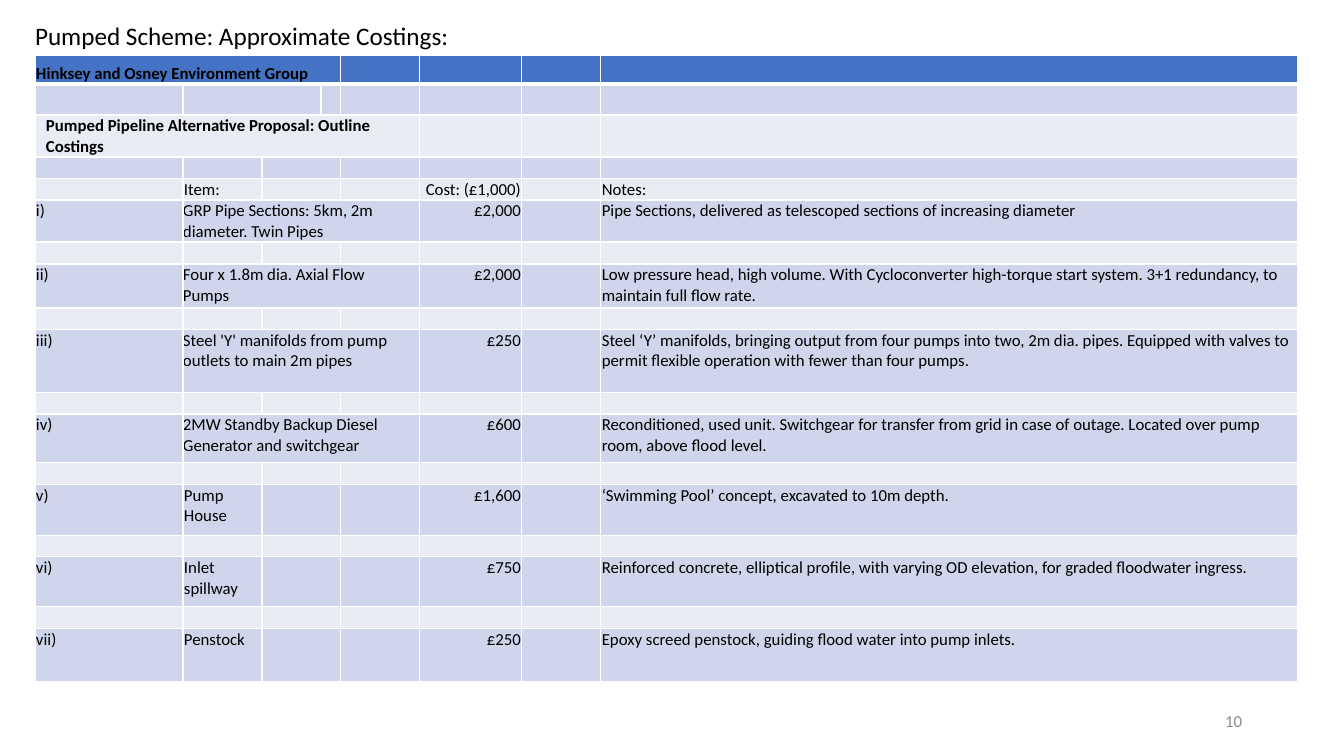
from lxml import etree
from pptx import Presentation
from pptx import util as u
from pptx.dml.color import RGBColor
from pptx.enum import text as t
from pptx.oxml import ns

PX = 914400 / 100.8
SLIDE_SIZE = (1344, 756)
FONT = "Calibri"
BLACK = RGBColor(0x00, 0x00, 0x00)
WHITE = RGBColor(0xFF, 0xFF, 0xFF)
GREY = RGBColor(0x8C, 0x8C, 0x8C)
BLUE = RGBColor(0x44, 0x72, 0xC4)
BAND_DARK = RGBColor(0xCF, 0xD5, 0xEA)
BAND_LIGHT = RGBColor(0xE9, 0xEB, 0xF5)

COLUMNS = [148, 79, 59, 20, 79, 102, 79, 697]
ROWS = [29, 31, 42, 21, 21, 42, 22, 44, 21, 63, 21, 49, 21, 51, 21, 50, 22, 53]
NUMBER, ITEM, COST, NOTES = 0, 1, 5, 7
FIRST_ITEM_ROW = 5
WIDE_ITEMS = 4  # items whose description runs across to the cost column

COSTINGS = [
    ("i)", "GRP Pipe Sections: 5km, 2m diameter. Twin Pipes", "£2,000",
     "Pipe Sections, delivered as telescoped sections of increasing diameter"),
    ("ii)", "Four x 1.8m dia. Axial Flow Pumps", "£2,000",
     "Low pressure head, high volume. With Cycloconverter high-torque start system. "
     "3+1 redundancy, to maintain full flow rate."),
    ("iii)", "Steel 'Y' manifolds from pump outlets to main 2m pipes", "£250",
     "Steel ‘Y’ manifolds, bringing output from four pumps into two, 2m dia. pipes. "
     "Equipped with valves to permit flexible operation with fewer than four pumps."),
    ("iv)", "2MW Standby Backup Diesel Generator and switchgear", "£600",
     "Reconditioned, used unit. Switchgear for transfer from grid in case of outage. "
     "Located over pump room, above flood level."),
    ("v)", "Pump House", "£1,600", "‘Swimming Pool’ concept, excavated to 10m depth."),
    ("vi)", "Inlet spillway", "£750",
     "Reinforced concrete, elliptical profile, with varying OD elevation, "
     "for graded floodwater ingress."),
    ("vii)", "Penstock", "£250",
     "Epoxy screed penstock, guiding flood water into pump inlets."),
]


def px(length):
    return u.Emu(round(length * PX))


def write(frame, words, size=12, color=BLACK, bold=False, align=t.PP_ALIGN.LEFT):
    paragraph = frame.paragraphs[0]
    paragraph.alignment = align
    run = paragraph.add_run()
    run.text = words
    run.font.name = FONT
    run.font.size = u.Pt(size)
    run.font.bold = bold
    run.font.color.rgb = color


def set_margins(holder, left, top, right, bottom):
    holder.margin_left, holder.margin_top = px(left), px(top)
    holder.margin_right, holder.margin_bottom = px(right), px(bottom)


def add_borders(cell, **widths):
    properties = cell._tc.get_or_add_tcPr()
    for place, side in enumerate("LRTB"):
        line = etree.Element(ns.qn(f"a:ln{side}"), w=str(u.Pt(widths.get(side, 1))))
        fill = etree.SubElement(line, ns.qn("a:solidFill"))
        etree.SubElement(fill, ns.qn("a:srgbClr"), val=str(WHITE))
        properties.insert(place, line)


def format_grid(table):
    for r in range(len(ROWS)):
        for c in range(len(COLUMNS)):
            cell = table.cell(r, c)
            cell.fill.solid()
            cell.fill.fore_color.rgb = BLUE if r == 0 else (BAND_LIGHT, BAND_DARK)[r % 2]
            add_borders(cell, B=3 if r == 0 else 1, T=3 if r == 1 else 1)
            set_margins(cell, 1, 1, 1, 0)
            # Keeps empty cells from stretching their row
            etree.SubElement(cell.text_frame.paragraphs[0]._p,
                             ns.qn("a:endParaRPr"), sz="1200")


def merge_cells(table):
    wide_rows = [FIRST_ITEM_ROW + 2 * n for n in range(WIDE_ITEMS)]
    spans = {0: (0, 3), 1: (1, 2), 2: (0, 4), **{r: (1, 4) for r in wide_rows}}
    for r in range(len(ROWS)):
        first, last = spans.get(r, (2, 3))
        table.cell(r, first).merge(table.cell(r, last))


def costings_table(slide, left, top):
    table = slide.shapes.add_table(len(ROWS), len(COLUMNS), px(left), px(top),
                                   px(sum(COLUMNS)), px(sum(ROWS))).table
    for column, width in zip(table.columns, COLUMNS):
        column.width = px(width)
    for row, height in zip(table.rows, ROWS):
        row.height = px(height)
    format_grid(table)
    merge_cells(table)

    # Headings
    headings = [(0, 0, "Hinksey and Osney Environment Group"),
                (2, 0, "Pumped Pipeline Alternative Proposal: Outline Costings"),
                (4, ITEM, "Item:"), (4, COST, "Cost: (£1,000)"), (4, NOTES, "Notes:")]
    for r, c, words in headings:
        cell = table.cell(r, c)
        cell.vertical_anchor = t.MSO_ANCHOR.BOTTOM
        write(cell.text_frame, words, bold=r < 4,
              align=t.PP_ALIGN.RIGHT if c == COST else t.PP_ALIGN.LEFT)
    set_margins(table.cell(2, 0), 11, 1, 11, 0)

    # Items, one on every second row
    for n, costing in enumerate(COSTINGS):
        r = FIRST_ITEM_ROW + 2 * n
        for c, words in zip((NUMBER, ITEM, COST, NOTES), costing):
            write(table.cell(r, c).text_frame, words,
                  align=t.PP_ALIGN.RIGHT if c == COST else t.PP_ALIGN.LEFT)
        if n < WIDE_ITEMS:
            set_margins(table.cell(r, ITEM), 0, 1, 11, 0)


def slide_title(slide, left, top, width, height):
    title = slide.shapes.title
    title.left, title.top, title.width, title.height = map(px, (left, top, width, height))
    frame = title.text_frame
    frame.word_wrap = True
    frame.auto_size = t.MSO_AUTO_SIZE.NONE
    frame.vertical_anchor = t.MSO_ANCHOR.TOP
    set_margins(frame, 10, 5, 10, 5)
    write(frame, "Pumped Scheme: Approximate Costings:", size=18)


def page_number(slide, left, top, width, height):
    frame = slide.shapes.add_textbox(*map(px, (left, top, width, height))).text_frame
    frame.word_wrap = True
    frame.vertical_anchor = t.MSO_ANCHOR.MIDDLE
    write(frame, "10", color=GREY, align=t.PP_ALIGN.RIGHT)


def main():
    deck = Presentation()
    deck.slide_width, deck.slide_height = map(px, SLIDE_SIZE)
    slide = deck.slides.add_slide(deck.slide_layouts[5])
    slide_title(slide, 25, 15, 1203, 40)
    costings_table(slide, 35, 55)
    page_number(slide, 950, 701, 302, 40)
    deck.save("out.pptx")


if __name__ == "__main__":
    main()
